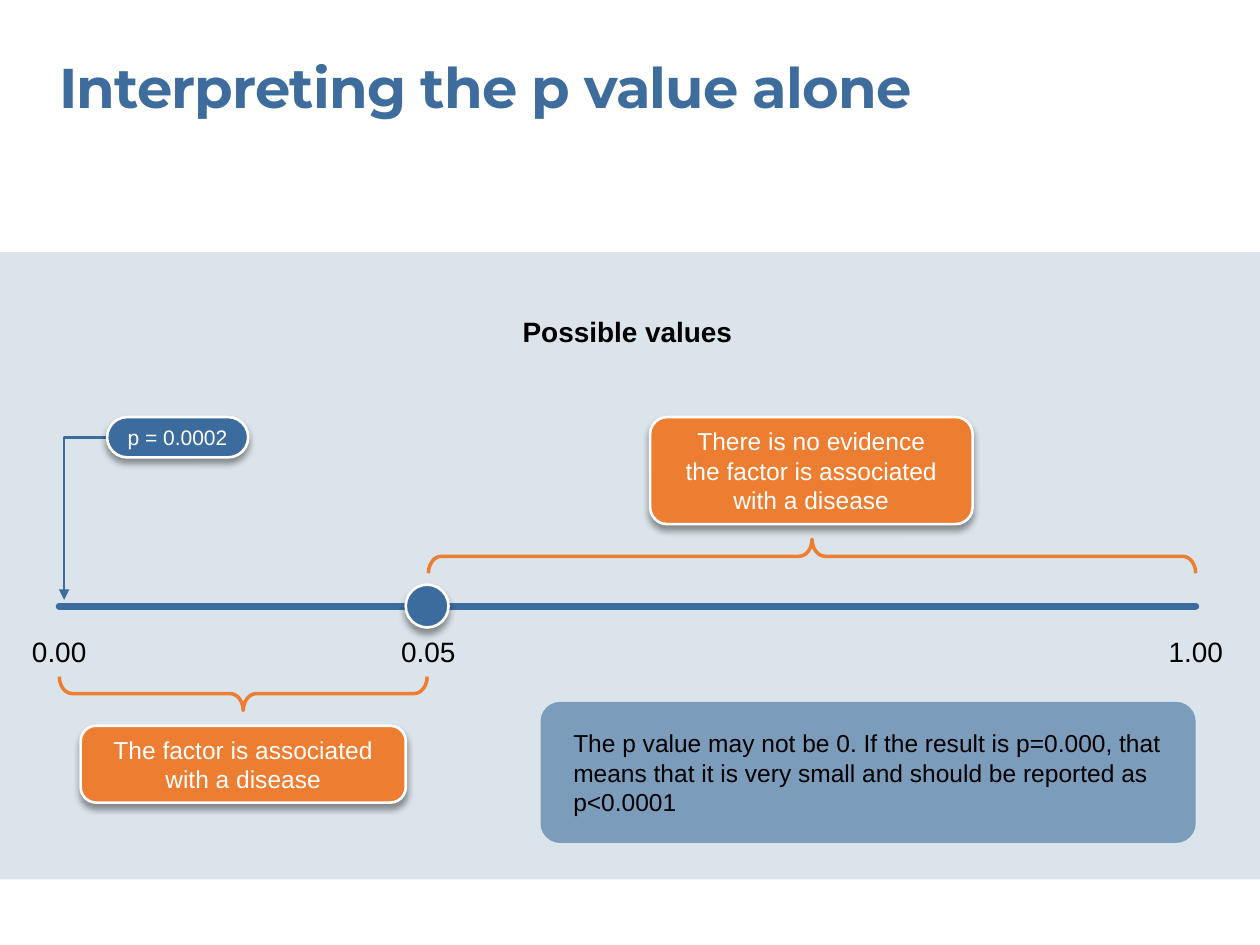
from dataclasses import dataclass

from pptx import Presentation
from pptx.dml.color import RGBColor
from pptx.enum.shapes import MSO_CONNECTOR, MSO_SHAPE
from pptx.enum.text import MSO_ANCHOR, MSO_AUTO_SIZE, PP_ALIGN
from pptx.oxml.ns import qn
from pptx.util import Inches, Pt
from lxml.etree import SubElement


@dataclass(frozen=True)
class Theme:
    blue: str = "3C6C9D"
    title_blue: str = "3D6C9D"
    orange: str = "ED7D31"
    brace_orange: str = "ED7D30"
    panel: str = "DBE4EA"
    white: str = "FFFFFF"
    black: str = "000000"
    title_font: str = "Montserrat"
    body_font: str = "Arial"
    title: int = 32
    label: int = 16
    body: int = 14
    small: int = 12


class SlideBuilder:
    def __init__(self, slide, theme):
        self.s, self.theme = slide, theme

    def add_run(self, tf, text, size, color, align=PP_ALIGN.CENTER, bold=False, font=None, spacing=None):
        p = tf.paragraphs[0]
        p.alignment = align
        r = p.add_run()
        r.text = text
        formats = {"name": font or self.theme.body_font, "size": Pt(size), "bold": bold}
        for name, value in formats.items():
            setattr(r.font, name, value)
        r.font.color.rgb = RGBColor.from_string(color)
        if spacing is not None:
            r.font._element.set("spc", str(int(spacing * 100)))

    def frame(self, tf, pad_x=0, pad_y=0, **formats):
        margins = {"margin_left": pad_x, "margin_right": pad_x, "margin_top": pad_y, "margin_bottom": pad_y}
        for name, value in margins.items():
            setattr(tf, name, Inches(value))
        for name, value in formats.items():
            setattr(tf, name, value)

    def text(self, box, text, size, color, **style):
        tf = self.s.shapes.add_textbox(*map(Inches, box)).text_frame
        self.frame(tf, word_wrap=True, auto_size=MSO_AUTO_SIZE.SHAPE_TO_FIT_TEXT)
        self.add_run(tf, text, size, color, **style)

    def shape(self, kind, box, fill=None, line=None, width=1.5, adjust=(), alpha=None, shadow=False):
        sp = self.s.shapes.add_shape(kind, *map(Inches, box))
        sp.shadow.inherit = False
        for i, value in enumerate(adjust):
            sp.adjustments[i] = value
        if fill:
            sp.fill.solid()
            sp.fill.fore_color.rgb = RGBColor.from_string(fill)
        else:
            sp.fill.background()
        if line:
            sp.line.color.rgb = RGBColor.from_string(line)
            sp.line.width = Pt(width)
        else:
            sp.line.fill.background()
        spPr = sp._element.spPr
        if alpha:
            clr = spPr.find(qn("a:solidFill")).find(qn("a:srgbClr"))
            SubElement(clr, qn("a:alpha"), val=str(alpha * 1000))
        if shadow:
            outer = SubElement(spPr.find(qn("a:effectLst")), qn("a:outerShdw"), blurRad=str(Pt(4)),
                               dist=str(Pt(3)), dir=str(90 * 60000), rotWithShape="0")
            clr = SubElement(outer, qn("a:srgbClr"), val=self.theme.black)
            SubElement(clr, qn("a:alpha"), val="40000")
        return sp

    def callout(self, box, text, fill, size, corner, wrap=True):
        sp = self.shape(MSO_SHAPE.ROUNDED_RECTANGLE, box, fill, self.theme.white, adjust=[corner], shadow=True)
        self.frame(sp.text_frame, 0.2, 0.12, word_wrap=wrap, vertical_anchor=MSO_ANCHOR.MIDDLE)
        self.add_run(sp.text_frame, text, size, self.theme.white)

    def brace(self, left, right, top, rotation, depth=0.27):
        # The box is given unrotated, around the centre of the span
        span = right - left
        box = ((left + right - depth) / 2, top + (depth - span) / 2, depth, span)
        sp = self.shape(MSO_SHAPE.RIGHT_BRACE, box, line=self.theme.brace_orange, width=2, adjust=[0.381, 0.5])
        sp.rotation = rotation

    def connector(self, start, end, width, bent=False, arrow=False, cap="flat"):
        kind = MSO_CONNECTOR.ELBOW if bent else MSO_CONNECTOR.STRAIGHT
        cxn = self.s.shapes.add_connector(kind, *map(Inches, start + end))
        cxn.line.color.rgb = RGBColor.from_string(self.theme.blue)
        cxn.line.width = Pt(width)
        spPr = cxn._element.spPr
        if bent:
            spPr.find(qn("a:prstGeom")).set("prst", "bentConnector2")
        ln = spPr.find(qn("a:ln"))
        ln.set("cap", cap)
        if arrow:
            SubElement(ln, qn("a:tailEnd"), type="triangle")
        SubElement(spPr, qn("a:effectLst"))


def main():
    prs = Presentation()
    prs.slide_width, prs.slide_height = Inches(10), Inches(7.5)
    t = Theme()
    b = SlideBuilder(prs.slides.add_slide(prs.slide_layouts[6]), t)
    zero, cutoff, one, axis_y = 0.47, 3.39, 9.49, 4.81

    # Background panel and headings
    b.shape(MSO_SHAPE.RECTANGLE, (0, 2, 10, 4.98), t.panel)
    b.text((zero, 0.42, 9.02, 0.54), "Interpreting the p value alone", t.title, t.title_blue,
           align=PP_ALIGN.LEFT, bold=True, font=t.title_font, spacing=-0.5)
    b.text((0.48, 2.5, 9, 0.27), "Possible values", t.label, t.black, bold=True)

    # Axis with cut-off marker and value labels
    b.connector((zero, axis_y), (one, axis_y), 4, cap="rnd")
    dot = 0.34
    b.shape(MSO_SHAPE.OVAL, (cutoff - dot / 2, axis_y - dot / 2, dot, dot), t.blue, t.white, shadow=True)
    label_w = 0.54
    for x, value in ((zero, "0.00"), (cutoff + 0.01, "0.05"), (one, "1.00")):
        b.text((x - label_w / 2, 5.04, label_w, 0.27), value, t.label, t.black)

    # Ranges on each side of the cut-off
    b.brace(zero, cutoff, 5.37, 90)
    b.brace(cutoff + 0.01, one, 4.28, 270)
    b.callout((0.64, 5.76, 2.58, 0.61), "The factor is associated with a disease", t.orange, t.body, 0.2)
    b.callout((5.16, 3.31, 2.56, 0.85), "There is no evidence the factor is associated with a disease",
              t.orange, t.body, 0.16)

    # Note on reporting
    b.shape(MSO_SHAPE.ROUNDED_RECTANGLE, (4.29, 5.57, 5.2, 1.12), t.blue, adjust=[0.14], alpha=60)
    b.text((4.55, 5.78, 4.76, 0.71),
           "The p value may not be 0. If the result is p=0.000, that means that it is very small "
           "and should be reported as p<0.0001", t.body, t.black, align=PP_ALIGN.LEFT)

    # Example value pointing at the axis
    b.connector((0.85, 3.47), (0.51, 4.76), 1.5, bent=True, arrow=True)
    b.callout((0.85, 3.31, 1.12, 0.32), "p = 0.0002", t.blue, t.small, 0.5, wrap=False)

    prs.save("out.pptx")


if __name__ == "__main__":
    main()
